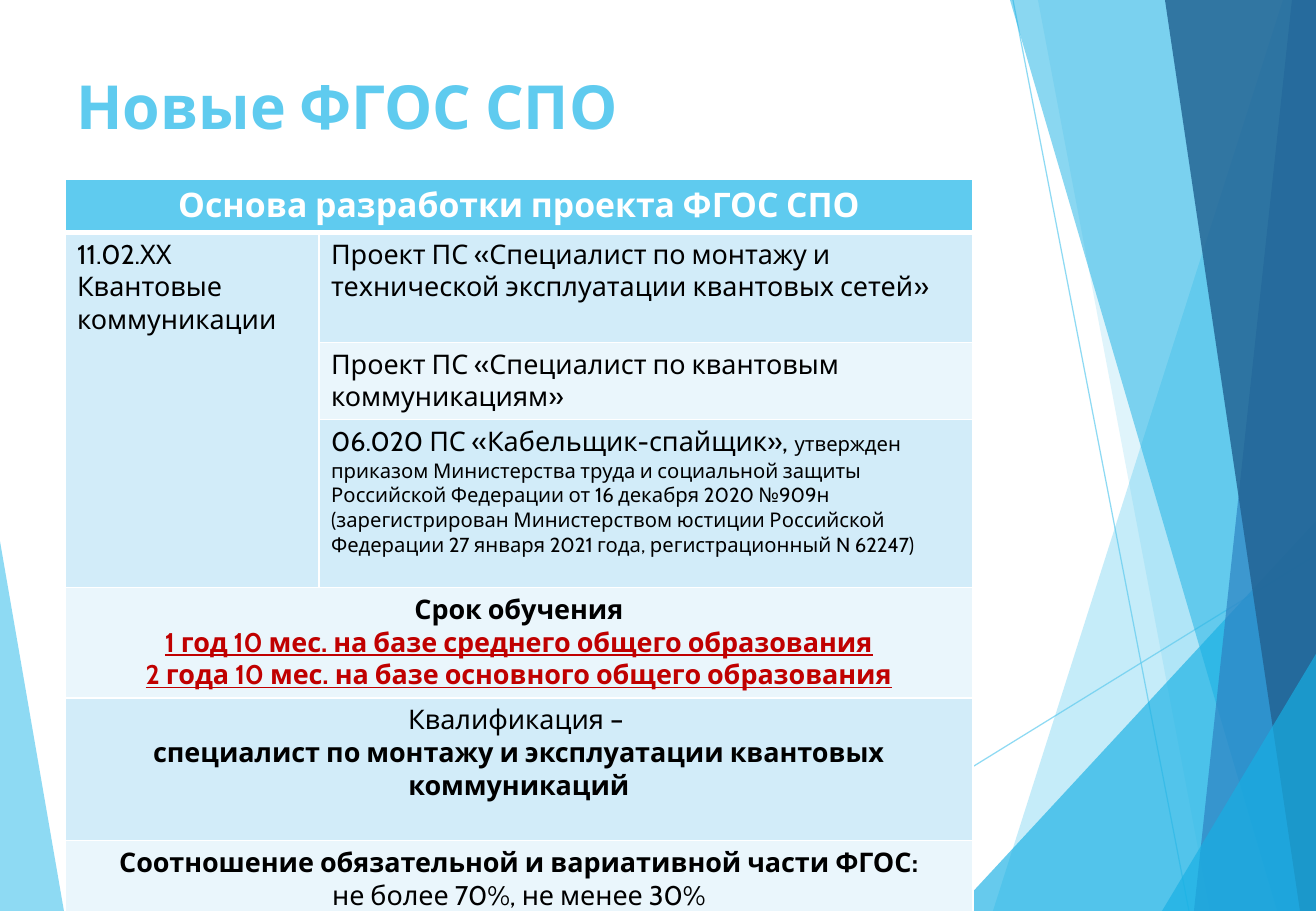
import dataclasses

import lxml.etree
import pptx
import pptx.dml.color
import pptx.enum.shapes
import pptx.enum.text
import pptx.oxml.ns
import pptx.util

PX = 7526  # EMU in one px
WIDTH, HEIGHT = 1316, 911


@dataclasses.dataclass(frozen=True)
class Theme:
    font: str = "Cabin"
    sky: str = "5FCBEF"
    cyan: str = "17B0E4"
    blue: str = "2E83C3"
    navy: str = "226292"
    white: str = "FFFFFF"
    black: str = "000000"
    red: str = "C00000"
    band_dark: str = "D2ECF9"
    band_light: str = "EAF6FC"
    title_size: int = 36
    header_size: int = 20
    body_size: int = 16
    note_size: int = 12


T = Theme()
TITLE = dict(size=T.title_size, bold=True, color=T.sky)
HEADER = dict(size=T.header_size, bold=True, color=T.white)
BODY = dict(size=T.body_size, bold=False, color=T.black)
BOLD = {**BODY, "bold": True}
NOTE = {**BODY, "size": T.note_size}
TERM = {**BOLD, "color": T.red, "underline": True}

LEFT = pptx.enum.text.PP_ALIGN.LEFT
CENTER = pptx.enum.text.PP_ALIGN.CENTER

COLUMNS = [254, 654]
ROWS = [52, 110, 77, 168, 110, 143, 77]

# row, column, rows spanned, columns spanned, fill, alignment, paragraphs of (text, format) runs
CELLS = [
    (0, 0, 1, 2, T.sky, CENTER, [[("Основа разработки проекта ФГОС СПО", HEADER)]]),
    (1, 0, 3, 1, T.band_dark, LEFT, [
        [("11.02.ХХ", BODY)],
        [("Квантовые коммуникации", BODY)]]),
    (1, 1, 1, 1, T.band_dark, LEFT, [
        [("Проект ПС «Специалист по монтажу и технической эксплуатации "
          "квантовых сетей»", BODY)]]),
    (2, 1, 1, 1, T.band_light, LEFT, [
        [("Проект ПС «Специалист по квантовым коммуникациям»", BODY)]]),
    (3, 1, 1, 1, T.band_dark, LEFT, [
        [("06.020 ПС «Кабельщик-спайщик», ", BODY),
         ("утвержден приказом Министерства труда и социальной защиты "
          "Российской Федерации от 16 декабря 2020 №909н (зарегистрирован "
          "Министерством юстиции Российской Федерации 27 января 2021 года, "
          "регистрационный N 62247)", NOTE)]]),
    (4, 0, 1, 2, T.band_light, CENTER, [
        [("Срок обучения", BOLD)],
        [("1 год 10 мес. на базе среднего общего образования", TERM)],
        [("2 года 10 мес. на базе основного общего образования", TERM)]]),
    (5, 0, 1, 2, T.band_dark, CENTER, [
        [("Квалификация – ", BODY)],
        [("специалист по монтажу и эксплуатации квантовых коммуникаций", BOLD)]]),
    (6, 0, 1, 2, T.band_light, CENTER, [
        [("Соотношение обязательной и вариативной части ФГОС:", BOLD)],
        [("не более 70%, не менее 30%", BODY)]]),
]


def rgb(color):
    return pptx.dml.color.RGBColor.from_string(color)


def sub(parent, tag, **attrs):
    return lxml.etree.SubElement(parent, pptx.oxml.ns.qn(tag), attrs)


def set_alpha(sp, percent):
    for clr in sp._element.spPr.iter(pptx.oxml.ns.qn("a:srgbClr")):
        sub(clr, "a:alpha", val=str(percent * 1000))


def format_run(r, fmt):
    r.font.name = T.font
    for name, value in fmt.items():
        if name == "color":
            r.font.color.rgb = rgb(value)
        else:
            setattr(r.font, name, pptx.util.Pt(value) if name == "size" else value)


def write_text(tf, paragraphs, align):
    for i, runs in enumerate(paragraphs):
        p = tf.paragraphs[0] if i == 0 else tf.add_paragraph()
        p.alignment = align
        for text, fmt in runs:
            r = p.add_run()
            r.text = text
            format_run(r, fmt)


def add_polygon(s, points, color, alpha):
    builder = s.shapes.build_freeform(*points[0], scale=PX)
    builder.add_line_segments(points[1:], close=True)
    sp = builder.convert_to_shape()
    sp.shadow.inherit = False
    sp.fill.solid()
    sp.fill.fore_color.rgb = rgb(color)
    sp.line.fill.background()
    set_alpha(sp, alpha)


def add_strip(s, top, bottom, color, alpha):
    """Fill from a slanted edge, given by its x at top and bottom, to the right side."""
    add_polygon(s, [(top, 0), (bottom, HEIGHT), (WIDTH, HEIGHT), (WIDTH, 0)], color, alpha)


def add_corner(s, x, y, color, alpha):
    """Fill the bottom right corner from x on the bottom to y on the right side."""
    add_polygon(s, [(x, HEIGHT), (WIDTH, y), (WIDTH, HEIGHT)], color, alpha)


def add_ray(s, *ends):
    line = s.shapes.add_connector(
        pptx.enum.shapes.MSO_CONNECTOR.STRAIGHT, *(v * PX for v in ends))
    line.line.color.rgb = rgb(T.sky)
    line.line.width = pptx.util.Pt(0.75)
    set_alpha(line, 70)
    sub(line._element.spPr, "a:effectLst")


def add_backdrop(s):
    add_polygon(s, [(0, 541), (64, HEIGHT), (0, HEIGHT)], T.sky, 70)
    add_ray(s, 739, HEIGHT, WIDTH, 555)
    add_ray(s, 1013, 0, 1189, HEIGHT)
    add_strip(s, 1283, 993, T.sky, 36)
    add_strip(s, 1038, 1210, T.sky, 20)
    add_corner(s, 955, 521, T.cyan, 66)
    add_strip(s, 1010, 1277, T.cyan, 50)
    add_strip(s, 1292, 1194, T.blue, 70)
    add_strip(s, 1165, 1300, T.navy, 82)
    add_corner(s, 1162, 654, T.cyan, 66)


def add_title(s, text):
    sp = s.shapes.title
    box = dict(left=64, top=63, width=914, height=106)
    for name, value in box.items():
        setattr(sp, name, value * PX)
    tf = sp.text_frame
    tf.word_wrap = True
    tf.auto_size = pptx.enum.text.MSO_AUTO_SIZE.NONE
    tf.vertical_anchor = pptx.enum.text.MSO_ANCHOR.TOP
    write_text(tf, [[(text, TITLE)]], LEFT)


def set_borders(cell, row):
    """White rules, thicker between the header and the body."""
    tc_pr = cell._tc.get_or_add_tcPr()
    thick = {0: "B", 1: "T"}.get(row)
    for side in "LRTB":
        points = 3 if side == thick else 1
        ln = sub(tc_pr, f"a:ln{side}", w=str(pptx.util.Pt(points)))
        sub(sub(ln, "a:solidFill"), "a:srgbClr", val=T.white)


def add_standards_table(s):
    frame = s.shapes.add_table(
        len(ROWS), len(COLUMNS), 65 * PX, 179 * PX, sum(COLUMNS) * PX, sum(ROWS) * PX)
    table = frame.table
    table.horz_banding = False
    for column, width in zip(table.columns, COLUMNS):
        column.width = width * PX
    for row, height in zip(table.rows, ROWS):
        row.height = height * PX
    for i in range(len(ROWS)):
        for j in range(len(COLUMNS)):
            set_borders(table.cell(i, j), i)
    for row, col, row_span, col_span, color, align, paragraphs in CELLS:
        cell = table.cell(row, col)
        last = table.cell(row + row_span - 1, col + col_span - 1)
        if row_span * col_span > 1:
            cell.merge(last)
        for i in range(row, row + row_span):
            for j in range(col, col + col_span):
                fill = table.cell(i, j).fill
                fill.solid()
                fill.fore_color.rgb = rgb(color)
        write_text(cell.text_frame, paragraphs, align)


def main():
    prs = pptx.Presentation()
    prs.slide_width, prs.slide_height = WIDTH * PX, HEIGHT * PX
    s = prs.slides.add_slide(prs.slide_layouts[5])
    add_backdrop(s)
    add_standards_table(s)
    add_title(s, "Новые ФГОС СПО")
    prs.save("out.pptx")


if __name__ == "__main__":
    main()
